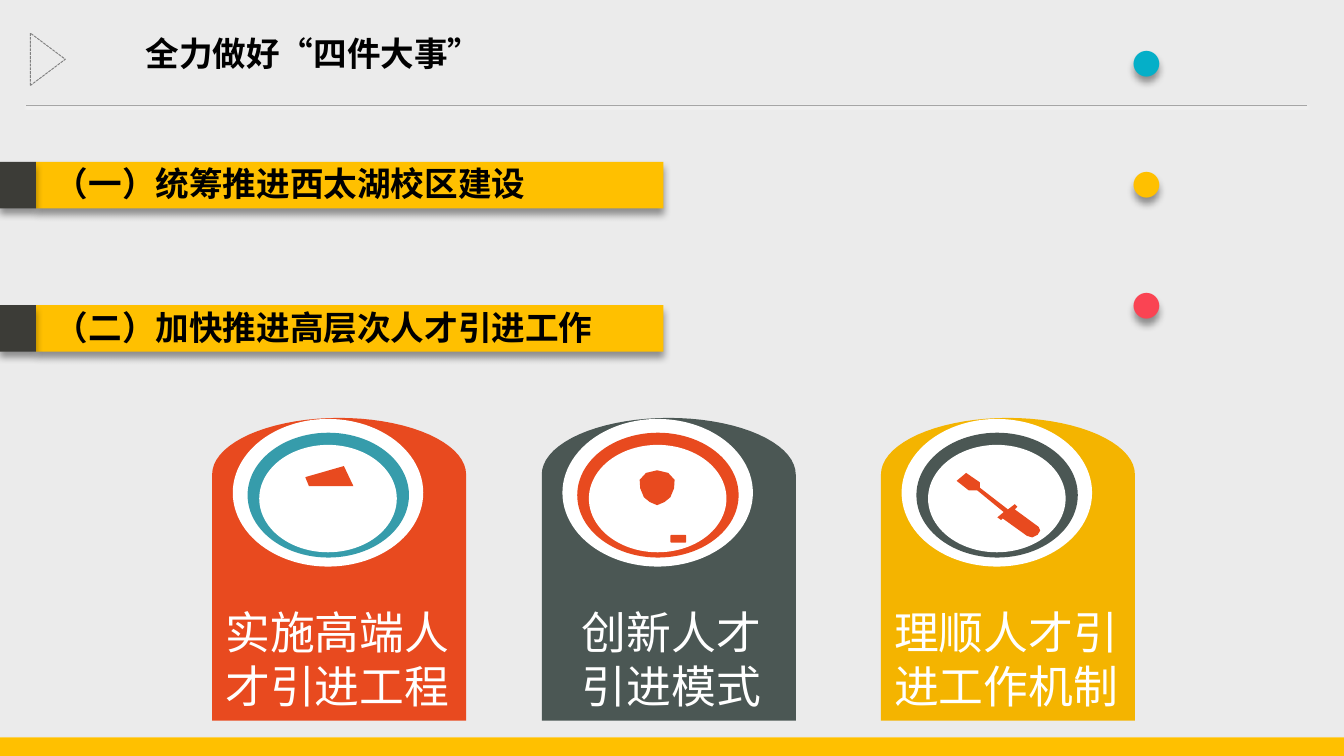
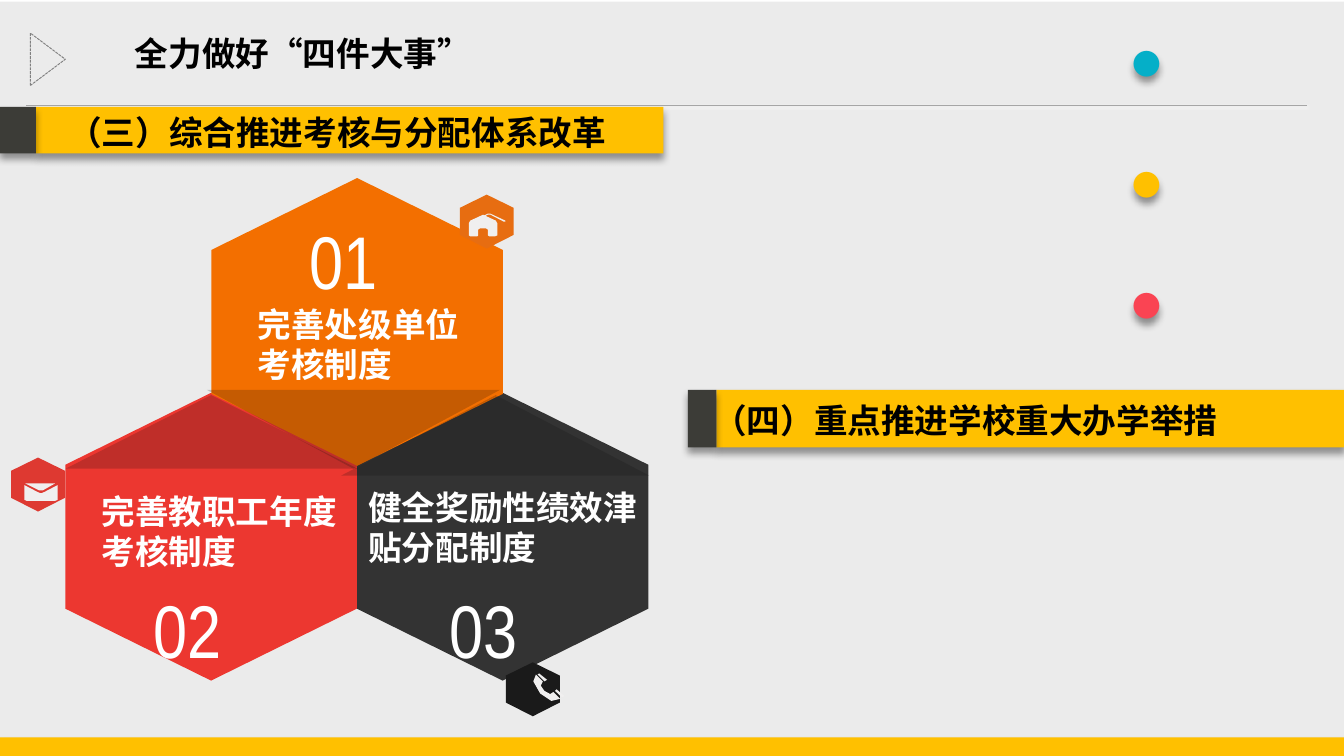
import math

from lxml import etree
from pptx import Presentation
from pptx import util as u
from pptx.dml import color as dml
from pptx.enum import dml as strokes, shapes, text
from pptx.oxml import parse_xml
from pptx.oxml import ns

# Shared look
CJK = "Noto Sans CJK SC"
BLACK, WHITE, GOLD, CHARCOAL = "000000", "FFFFFF", "FFC000", "3C3C37"
ORANGE, SLATE, ICON_GREY = "E84A1F", "4B5754", "F0EFEF"
SHADOW = (
    '<a:outerShdw xmlns:a="http://schemas.openxmlformats.org/drawingml/2006/main" '
    'blurRad="{}" dist="{}" dir="5400000" algn="t" rotWithShape="0">'
    '<a:srgbClr val="{}"><a:alpha val="{}"/></a:srgbClr></a:outerShdw>'
)
SOFT_SHADOW = SHADOW.format(50800, 38100, BLACK, 40000)
LINE_SHADOW = SHADOW.format(12700, 12700, WHITE, 100000)
PRESET = shapes.MSO_SHAPE
rgb = dml.RGBColor.from_string


def draw(page, form, colour, box=None, alpha=None, shadow=False):
    """Add a preset shape in a box, or a closed outline from a list of points (cm)."""
    if isinstance(form, list):
        points = [(u.Cm(x), u.Cm(y)) for x, y in form]
        builder = page.shapes.build_freeform(*points[0])
        builder.add_line_segments(points[1:], close=True)
        shape = builder.convert_to_shape()
    else:
        shape = page.shapes.add_shape(form, *map(u.Cm, box))
    shape.shadow.inherit = False
    shape.line.fill.background()
    if colour is None:
        shape.fill.background()
    else:
        shape.fill.solid()
        shape.fill.fore_color.rgb = rgb(colour)
    if alpha:
        tint = shape._element.spPr.find(".//" + ns.qn("a:srgbClr"))
        etree.SubElement(tint, ns.qn("a:alpha"), val=str(alpha * 1000))
    if shadow:
        effects = shape._element.spPr.find(ns.qn("a:effectLst"))
        effects.append(parse_xml(SOFT_SHADOW))
    return shape


def write(page, box, lines, size, face=CJK, colour=BLACK, bold=False, align=None):
    """Add a wrapping text box with one paragraph per line."""
    label = page.shapes.add_textbox(*map(u.Cm, box))
    frame = label.text_frame
    frame.word_wrap = True
    frame.auto_size = text.MSO_AUTO_SIZE.SHAPE_TO_FIT_TEXT
    for number, line in enumerate(lines):
        para = frame.add_paragraph() if number else frame.paragraphs[0]
        para.text = line
        para.alignment = align
        font = para.font
        font.size, font.name, font.bold = u.Pt(size), face, bold
        font.color.rgb = rgb(colour)
        etree.SubElement(font._element, ns.qn("a:ea"), typeface=CJK)
    return label


deck = Presentation()
deck.slide_width, deck.slide_height = u.Cm(25.4), u.Cm(14.29)

# Per page: title left, veil box, banners
# Banner: tab left, tab width, top, height, text left, text top, text width, wording
page_plans = [
    (2.5, (0, 0, 25.4, 13.94), [
        (0, 0.68, 5.77, 0.88, 0.79, 5.67, 12.75, "（二）加快推进高层次人才引进工作"),
        (0, 0.68, 3.06, 0.88, 0.79, 2.95, 11.76, "（一）统筹推进西太湖校区建设"),
    ]),
    (2.3, (0, 0.03, 25.48, 14.12), [
        (0, 0.68, 2.02, 0.88, 1.04, 1.99, 11.96, "（三）综合推进考核与分配体系改革"),
        (13, 0.54, 7.37, 1.09, 13.23, 7.43, 12.17, "（四）重点推进学校重大办学举措"),
    ]),
]
pages = []
for title_left, veil, banners in page_plans:
    page = deck.slides.add_slide(deck.slide_layouts[6])
    pages.append(page)
    draw(page, PRESET.RECTANGLE, BLACK, veil, alpha=8)

    # Header rule
    rule = page.shapes.add_connector(
        shapes.MSO_CONNECTOR.STRAIGHT, u.Cm(0.5), u.Cm(1.99), u.Cm(24.7), u.Cm(1.99))
    rule.line.color.rgb = rgb("A6A6A6")
    rule.line.width = u.Pt(0.75)
    effects = etree.SubElement(rule._element.spPr, ns.qn("a:effectLst"))
    effects.append(parse_xml(LINE_SHADOW))

    # Coloured dots
    dots = write(page, (20.47, -0.09, 4.19, 2.57), [""], 54, bold=True,
                 align=text.PP_ALIGN.JUSTIFY)
    for mark, colour in (("· ", "05AFC8"), ("· ", GOLD), ("·", "FA4453")):
        span = dots.text_frame.paragraphs[0].add_run()
        span.text = mark
        span.font.color.rgb = rgb(colour)
    dots.shadow.inherit = False
    dots._element.spPr.find(ns.qn("a:effectLst")).append(parse_xml(SOFT_SHADOW))

    # Section banners
    for left, tab, top, height, text_left, text_top, text_width, wording in banners:
        draw(page, PRESET.RECTANGLE, GOLD, (left + tab, top, 11.86, height), shadow=True)
        draw(page, PRESET.RECTANGLE, CHARCOAL, (left, top, tab, height), shadow=True)
        write(page, (text_left, text_top, text_width, 1.02), [wording], 18, bold=True)

    # Title marker, footer band and title
    marker = draw(page, PRESET.FLOWCHART_MERGE, None, (0.41, 0.79, 0.99, 0.66))
    marker.rotation = 270
    marker.line.color.rgb = rgb("808080")
    marker.line.width = u.Pt(0.5)
    marker.line.dash_style = strokes.MSO_LINE.SQUARE_DOT
    draw(page, PRESET.RECTANGLE, GOLD, (0, 13.94, 25.4, 0.61), shadow=True)
    write(page, (title_left, 0.5, 7.62, 1.02), ["全力做好“四件大事”"], 18, bold=True)

talent_page, reform_page = pages

# Talent cards: left, card colour, ring colour, text left, text width, font, alignment, lines
cards = [
    (4.01, ORANGE, "369CAB", 4.01, 4.78, "Calibri", None, ["实施高端人才引进工程"]),
    (10.24, SLATE, ORANGE, 10.67, 4.04, "Calibri", text.PP_ALIGN.CENTER,
     ["创新人才", "引进模式"]),
    (16.65, "F4B400", SLATE, 16.65, 4.8, "Arial", None, ["理顺人才引进工作机制"]),
]
for left, card, ring, text_left, text_width, face, align, lines in cards:
    dome = [(left + 2.4 - 2.4 * math.cos(math.radians(angle)),
             8.97 - 1.07 * math.sin(math.radians(angle))) for angle in range(0, 181, 5)]
    draw(talent_page, dome + [(left + 4.8, 13.62), (left, 13.62)], card)
    for inset, top, width, height, colour in (
            (0.39, 7.92, 3.6, 2.79, WHITE),
            (0.67, 8.18, 3.05, 2.36, ring),
            (0.89, 8.41, 2.6, 2.03, WHITE)):
        draw(talent_page, PRESET.OVAL, colour, (left + inset, top, width, height))
    write(talent_page, (text_left, 11.31, text_width, 2.31), lines, 24, face, WHITE,
          align=align)

# Card icons
paper = [(6.5, 8.81), (6.68, 9.19), (5.84, 9.19), (5.77, 9.02)]
bulb = [(12.42, 9.55), (12.28, 9.49), (12.17, 9.4), (12.1, 9.23), (12.09, 9.07),
        (12.21, 8.94), (12.42, 8.89), (12.63, 8.94), (12.75, 9.07), (12.74, 9.23),
        (12.67, 9.4), (12.56, 9.49)]
screwdriver = [(18.52, 9.22), (19.05, 9.63), (19.18, 9.53), (19.23, 9.58), (19.18, 9.63),
               (19.63, 9.96), (19.66, 10.03), (19.61, 10.11), (19.51, 10.16),
               (19.41, 10.13), (18.95, 9.8), (18.92, 9.83), (18.85, 9.78), (18.97, 9.68),
               (18.47, 9.27), (18.31, 9.27), (18.08, 9.09), (18.26, 8.94), (18.52, 9.12)]
for icon in (paper, bulb, screwdriver):
    draw(talent_page, icon, ORANGE)
draw(talent_page, PRESET.ROUNDED_RECTANGLE, ORANGE, (12.67, 10.11, 0.3, 0.15))

# Reform hexagons
for left, top, colour in ((6.78, 7.39, "333333"), (1.27, 7.39, "EC3730"),
                          (4.03, 3.33, "F36F00")):
    draw(reform_page, PRESET.HEXAGON, colour, (left, top, 5.44, 5.51)).rotation = 270

# Shaded folds where the hexagons meet
for fold in ([(9.37, 7.47), (12.27, 8.99), (6.45, 8.99)],
             [(3.99, 7.47), (6.76, 8.86), (1.24, 8.86)],
             [(6.68, 8.86), (9.45, 7.37), (3.91, 7.37)]):
    draw(reform_page, fold, "0D0D0D", alpha=20)

# Small badges with their icons
house = [(9.13, 4.06), (8.89, 4.17), (8.86, 4.22), (8.86, 4.45), (8.89, 4.47),
         (9.02, 4.47), (9.04, 4.45), (9.04, 4.34), (9.07, 4.32), (9.19, 4.32),
         (9.22, 4.34), (9.22, 4.45), (9.25, 4.47), (9.35, 4.47), (9.4, 4.45),
         (9.4, 4.22), (9.37, 4.17)]
roof = [(9.55, 4.19), (9.52, 4.19), (9.27, 4.06), (9.22, 4.06), (8.97, 4.19),
        (8.92, 4.19), (8.94, 4.17), (9.22, 4.04), (9.27, 4.04), (9.55, 4.17)]
handset = [(10.46, 13.08), (10.4, 13.12), (10.29, 13.06), (10.22, 12.96), (10.26, 12.88),
           (10.13, 12.75), (10.08, 12.88), (10.21, 13.11), (10.42, 13.25), (10.59, 13.21)]
mouthpiece = [(10.67, 13.16), (10.62, 13.18), (10.49, 13.06), (10.52, 13.03)]
earpiece = [(10.34, 12.85), (10.29, 12.88), (10.16, 12.75), (10.19, 12.73)]
flap = [(0.81, 9.27), (1.04, 9.14), (0.48, 9.14), (0.74, 9.27)]
envelope = [(0.84, 9.3), (0.79, 9.32), (0.76, 9.32), (0.71, 9.3), (0.46, 9.17),
            (0.46, 9.45), (0.51, 9.47), (1.04, 9.47), (1.09, 9.45), (1.09, 9.17)]
badge = [(0, 0.25), (0.51, 0), (1.02, 0.25), (1.02, 0.76), (0.51, 1.02), (0, 0.76)]
for left, top, colour, icon_parts in (
        (8.69, 3.68, "E76D11", (house, roof)),
        (9.56, 12.52, "1A1A1A", (handset, mouthpiece, earpiece)),
        (0.21, 8.65, "DE3931", (flap, envelope))):
    draw(reform_page, [(left + x, top + y) for x, y in badge], colour)
    for part in icon_parts:
        draw(reform_page, part, ICON_GREY)

# Hexagon numbers and labels
for number, number_box, wording, label_box in (
        ("01", (5.6, 3.94, 2.97, 1.96), "完善处级单位考核制度", (4.62, 5.62, 4.52, 1.8)),
        ("02", (2.65, 10.91, 2.69, 1.96), "完善教职工年度考核制度", (1.67, 9.15, 5.21, 1.8)),
        ("03", (8.25, 10.91, 2.92, 1.96), "健全奖励性绩效津贴分配制度",
         (6.71, 9.08, 5.82, 1.8))):
    write(reform_page, number_box, [number], 40, "Arial Narrow", WHITE)
    write(reform_page, label_box, [wording], 18, "Calibri", WHITE, bold=True)

deck.save("out.pptx")
